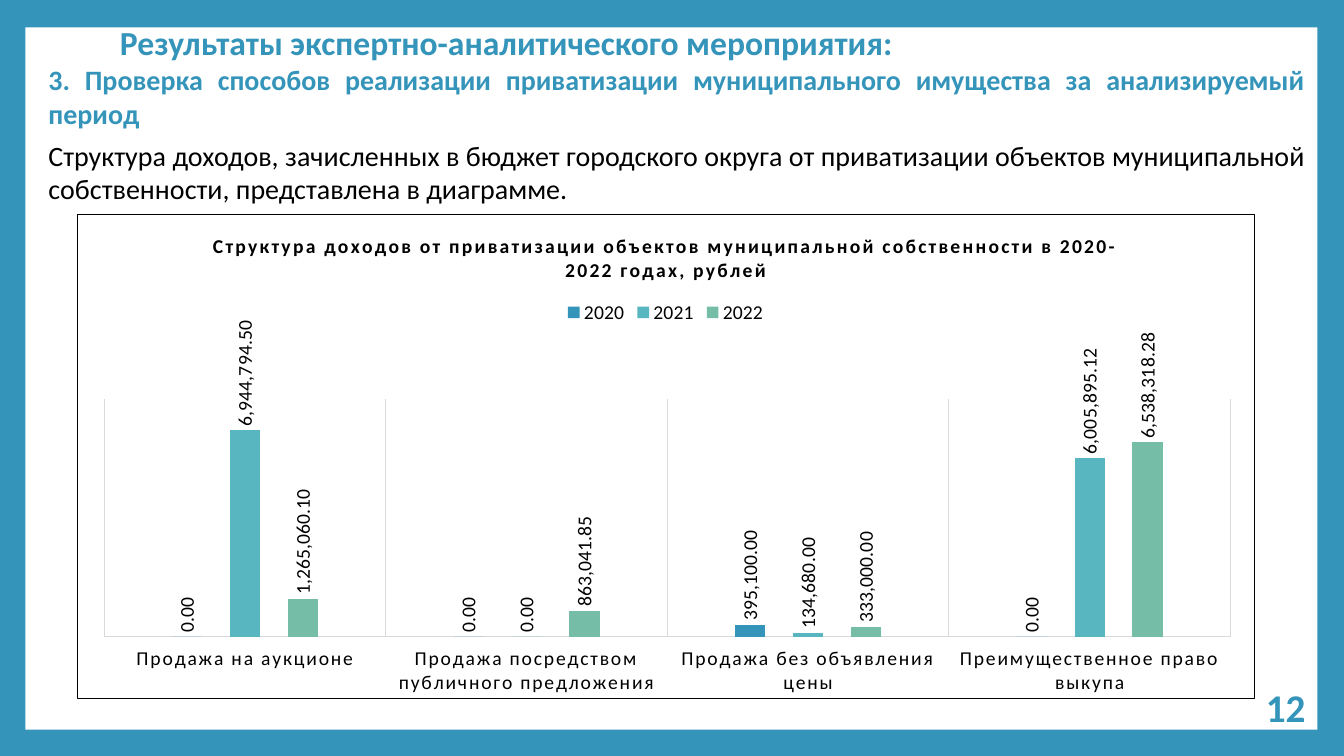
from dataclasses import dataclass

from pptx import Presentation
from pptx.chart.data import CategoryChartData
from pptx.dml.color import RGBColor
from pptx.enum.chart import (XL_CHART_TYPE, XL_LABEL_POSITION,
                             XL_LEGEND_POSITION, XL_TICK_LABEL_POSITION,
                             XL_TICK_MARK)
from pptx.enum.shapes import MSO_SHAPE
from pptx.enum.text import MSO_ANCHOR, PP_ALIGN
from pptx.oxml import parse_xml
from pptx.oxml.ns import nsdecls
from pptx.util import Cm, Pt

COLUMN = XL_CHART_TYPE.COLUMN_CLUSTERED
OUTSIDE = XL_LABEL_POSITION.OUTSIDE_END
LEGEND_TOP = XL_LEGEND_POSITION.TOP
LOW = XL_TICK_LABEL_POSITION.LOW
NO_TICK = XL_TICK_MARK.NONE
RECT = MSO_SHAPE.RECTANGLE
TOP, MIDDLE = MSO_ANCHOR.TOP, MSO_ANCHOR.MIDDLE
LEFT, RIGHT, JUSTIFY = PP_ALIGN.LEFT, PP_ALIGN.RIGHT, PP_ALIGN.JUSTIFY


@dataclass(frozen=True)
class Theme:
    face: str = "Calibri"
    blue: str = "3494BA"
    teal: str = "58B6C0"
    green: str = "75BDA7"
    black: str = "000000"
    white: str = "FFFFFF"
    grid: str = "D9D9D9"
    head: int = 24
    page: int = 28
    body: int = 20
    chart: int = 14


THEME = Theme()
MONEY = "#,##0.00"
GROUPS = ["Продажа на аукционе", "Продажа посредством публичного предложения",
          "Продажа без объявления цены", "Преимущественное право выкупа"]
SALES = [("2020", THEME.blue, (0, 0, 395100, 0)),
         ("2021", THEME.teal, (6944794.5, 0, 134680, 6005895.12)),
         ("2022", THEME.green, (1265060.1, 863041.85, 333000, 6538318.28))]


def rgb(code):
    return RGBColor.from_string(code)


def style(font, size, color=THEME.black, bold=False):
    font.name, font.size, font.bold = THEME.face, Pt(size), bold
    font.color.rgb = rgb(color)


def add_box(slide, x, y, w, h, anchor=TOP, inset=0.25):
    frame = slide.shapes.add_textbox(Cm(x), Cm(y), Cm(w), Cm(h)).text_frame
    frame.word_wrap = True
    frame.vertical_anchor = anchor
    frame.margin_left = Cm(inset)
    return frame


def write(par, text, size, color=THEME.black, bold=False, align=LEFT,
          before=0, lines=1.0):
    par.alignment, par.line_spacing = align, lines
    par.space_before = Pt(before)
    run = par.add_run()
    run.text = text
    style(run.font, size, color, bold)
    return run


def add_panel(slide):
    panel = slide.shapes.add_shape(RECT, Cm(0.64), Cm(0.69), Cm(32.56), Cm(17.7))
    panel.shadow.inherit = False
    panel.fill.solid()
    panel.fill.fore_color.rgb = rgb(THEME.white)
    panel.line.fill.background()


def space_out(node, amount):
    """Set letter spacing, in hundredths of a point."""
    for props in node.xpath(".//a:defRPr | .//a:rPr"):
        props.set("spc", str(amount))


def frame_chart(chart):
    """Fill and outline the whole chart area."""
    chart._chartSpace.chart.addnext(parse_xml(
        f'<c:spPr {nsdecls("c", "a")}><a:solidFill><a:srgbClr val="{THEME.white}"/>'
        f'</a:solidFill><a:ln w="{Pt(0.75)}"><a:solidFill>'
        f'<a:srgbClr val="{THEME.black}"/></a:solidFill></a:ln></c:spPr>'))


def place_plot(chart, x, y, w, h):
    """Fix the inner plot area, in fractions of the chart."""
    plot = chart._chartSpace.chart.plotArea
    for old in plot.xpath("./c:layout"):
        plot.remove(old)
    sizes = "".join(f'<c:{tag} val="{val}"/>'
                    for tag, val in (("x", x), ("y", y), ("w", w), ("h", h)))
    plot.insert(0, parse_xml(
        f'<c:layout {nsdecls("c")}><c:manualLayout><c:layoutTarget val="inner"/>'
        f'<c:xMode val="edge"/><c:yMode val="edge"/>{sizes}'
        '</c:manualLayout></c:layout>'))


def set_axes(chart):
    groups, values = chart.category_axis, chart.value_axis
    groups.major_tick_mark = groups.minor_tick_mark = NO_TICK
    groups.tick_label_position = LOW
    groups.has_major_gridlines = True
    for line in (groups.format.line, groups.major_gridlines.format.line):
        line.color.rgb = rgb(THEME.grid)
        line.width = Pt(0.75)
    style(groups.tick_labels.font, THEME.chart)
    space_out(groups._element, 120)
    values.has_major_gridlines = False
    values.minimum_scale, values.maximum_scale = 0, 8000000
    values.tick_labels.number_format = MONEY
    values.tick_labels.number_format_is_linked = False
    values.visible = False


def paint(series, color):
    series.format.fill.solid()
    series.format.fill.fore_color.rgb = rgb(color)
    series.invert_if_negative = False
    labels = series.data_labels
    labels.show_value = True
    labels.position = OUTSIDE
    labels.number_format, labels.number_format_is_linked = MONEY, False
    style(labels.font, THEME.chart)
    for body in labels._element.xpath(".//a:bodyPr"):
        body.set("rot", "-5400000")
        body.set("vert", "horz")


def add_sales(slide):
    data = CategoryChartData(number_format=MONEY)
    data.categories = GROUPS
    for name, _, values in SALES:
        data.add_series(name, values)
    chart = slide.shapes.add_chart(COLUMN, Cm(1.93), Cm(5.38), Cm(29.69),
                                   Cm(12.24), data).chart
    style(chart.font, THEME.chart)
    chart.has_title = True
    title = chart.chart_title
    title.include_in_layout = False
    run = write(title.text_frame.paragraphs[0],
                "Структура доходов от приватизации объектов муниципальной "
                "собственности в 2020-2022 годах, рублей",
                THEME.chart, bold=True, align=PP_ALIGN.CENTER)
    space_out(run._r, 150)
    chart.has_legend = True
    chart.legend.position = LEGEND_TOP
    chart.legend.include_in_layout = False
    style(chart.legend.font, THEME.chart)
    plot = chart.plots[0]
    plot.gap_width, plot.overlap, plot.vary_by_categories = 444, -90, False
    for series, (_, color, _) in zip(plot.series, SALES):
        paint(series, color)
    set_axes(chart)
    place_plot(chart, 0.023, 0.382, 0.957, 0.49)
    frame_chart(chart)


def main():
    deck = Presentation()
    deck.slide_width, deck.slide_height = Cm(33.87), Cm(19.05)
    slide = deck.slides.add_slide(deck.slide_layouts[6])
    slide.background.fill.solid()
    slide.background.fill.fore_color.rgb = rgb(THEME.blue)
    add_panel(slide)

    head = add_box(slide, 2.77, 0.46, 30.02, 1.32, MIDDLE)
    write(head.paragraphs[0], "Результаты экспертно-аналитического мероприятия:",
          THEME.head, THEME.blue, True, lines=0.9)
    page = add_box(slide, 25.91, 17.3, 7.24, 1.02, MIDDLE)
    write(page.paragraphs[0], "12", THEME.page, THEME.blue, True, RIGHT)

    body = add_box(slide, 0.84, 1.45, 32.31, 16.69, inset=0.38)
    write(body.paragraphs[0],
          "3. Проверка способов реализации приватизации муниципального "
          "имущества за анализируемый период",
          THEME.body, THEME.blue, True, JUSTIFY)
    write(body.add_paragraph(),
          "Структура доходов, зачисленных в бюджет городского округа от "
          "приватизации объектов муниципальной собственности, представлена "
          "в диаграмме.", THEME.body, align=JUSTIFY, before=6)
    add_sales(slide)
    deck.save("out.pptx")


if __name__ == "__main__":
    main()
